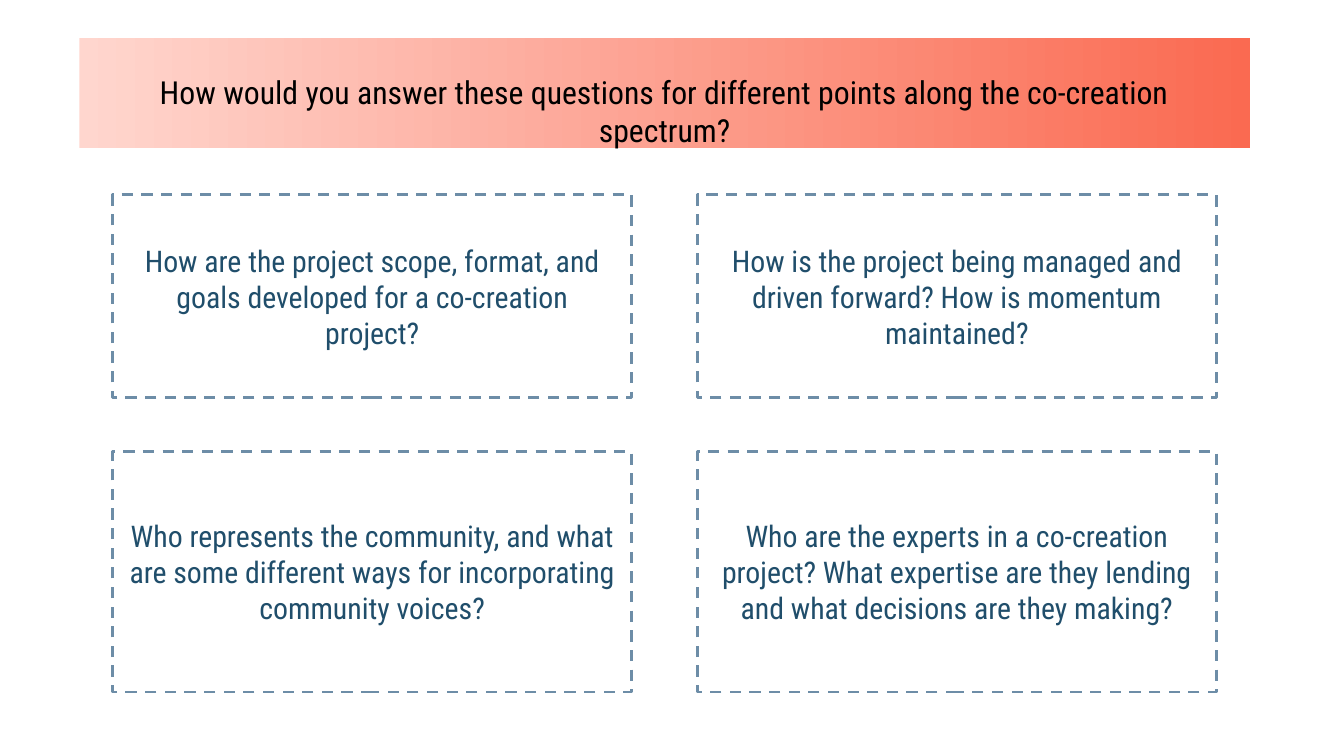
from dataclasses import dataclass

from pptx import Presentation
from pptx.dml.color import RGBColor
from pptx.enum import dml, shapes, text
from pptx.util import Inches, Pt

FONT = "Roboto Condensed"
BLACK = RGBColor(0x00, 0x00, 0x00)
NAVY = RGBColor(0x20, 0x4E, 0x6B)
STEEL = RGBColor(0x6D, 0x8D, 0xA7)
BLUSH = RGBColor(0xFF, 0xD6, 0xCE)
CORAL = RGBColor(0xFA, 0x6A, 0x51)

SLIDE_W = Inches(10)
SLIDE_H = SLIDE_W * 9 // 16
CARD_W = 3.86
COLUMNS = (0.84, 5.19)


@dataclass(frozen=True)
class CardRow:
    top: float
    height: float
    questions: tuple[str, str]


ROWS = (
    CardRow(1.45, 1.51, (
        "How are the project scope, format, and goals developed for a co-creation project?",
        "How is the project being managed and driven forward? How is momentum maintained?",
    )),
    CardRow(3.36, 1.79, (
        "Who represents the community, and what are some different ways for "
        "incorporating community voices?",
        "Who are the experts in a co-creation project? What expertise are they "
        "lending and what decisions are they making?",
    )),
)


def set_attrs(obj, values: dict) -> None:
    for name, value in values.items():
        setattr(obj, name, value)


def write(sp, words: str, size: float, color: RGBColor, anchor, space_after: float = 0) -> None:
    """Fill a shape with one centred paragraph."""
    tf = sp.text_frame
    margins = {f"margin_{side}": Inches(0.1) for side in ("left", "top", "right", "bottom")}
    set_attrs(tf, {"word_wrap": True, "vertical_anchor": anchor, **margins})
    p = tf.paragraphs[0]
    set_attrs(p, {"alignment": text.PP_ALIGN.CENTER, "space_after": Pt(space_after)})
    r = p.add_run()
    r.text = words
    set_attrs(r.font, {"name": FONT, "size": Pt(size)})
    r.font.color.rgb = color


def add_rect(s, left: float, top: float, width: float, height: float):
    sp = s.shapes.add_shape(shapes.MSO_SHAPE.RECTANGLE, Inches(left), Inches(top),
                            Inches(width), Inches(height))
    sp.shadow.inherit = False
    return sp


def add_banner(s) -> None:
    sp = add_rect(s, 0.59, 0.28, 8.71, 0.82)
    sp.line.fill.background()
    sp.fill.gradient()
    sp.fill.gradient_angle = 0
    for stop, color, position in zip(sp.fill.gradient_stops, (BLUSH, CORAL), (0, 1)):
        stop.color.rgb = color
        stop.position = position


def add_card(s, left: float, row: CardRow, question: str) -> None:
    sp = add_rect(s, left, row.top, CARD_W, row.height)
    sp.fill.background()
    sp.line.color.rgb = STEEL
    set_attrs(sp.line, {"width": Pt(1.5), "dash_style": dml.MSO_LINE.DASH})
    write(sp, question, 16, NAVY, text.MSO_ANCHOR.MIDDLE, space_after=10)


def add_title(s) -> None:
    sp = s.shapes.add_textbox(Inches(0.65), Inches(0.44), Inches(8.59), Inches(0.49))
    write(sp, "How would you answer these questions for different points along "
              "the co-creation spectrum?", 17, BLACK, text.MSO_ANCHOR.TOP)
    sp.text_frame.auto_size = text.MSO_AUTO_SIZE.SHAPE_TO_FIT_TEXT


def main() -> None:
    prs = Presentation()
    set_attrs(prs, {"slide_width": SLIDE_W, "slide_height": SLIDE_H})
    s = prs.slides.add_slide(prs.slide_layouts[6])

    # Heading band
    add_banner(s)

    # Question cards
    for row in ROWS:
        for left, question in zip(COLUMNS, row.questions):
            add_card(s, left, row, question)

    # Heading
    add_title(s)
    prs.save("out.pptx")


if __name__ == "__main__":
    main()
